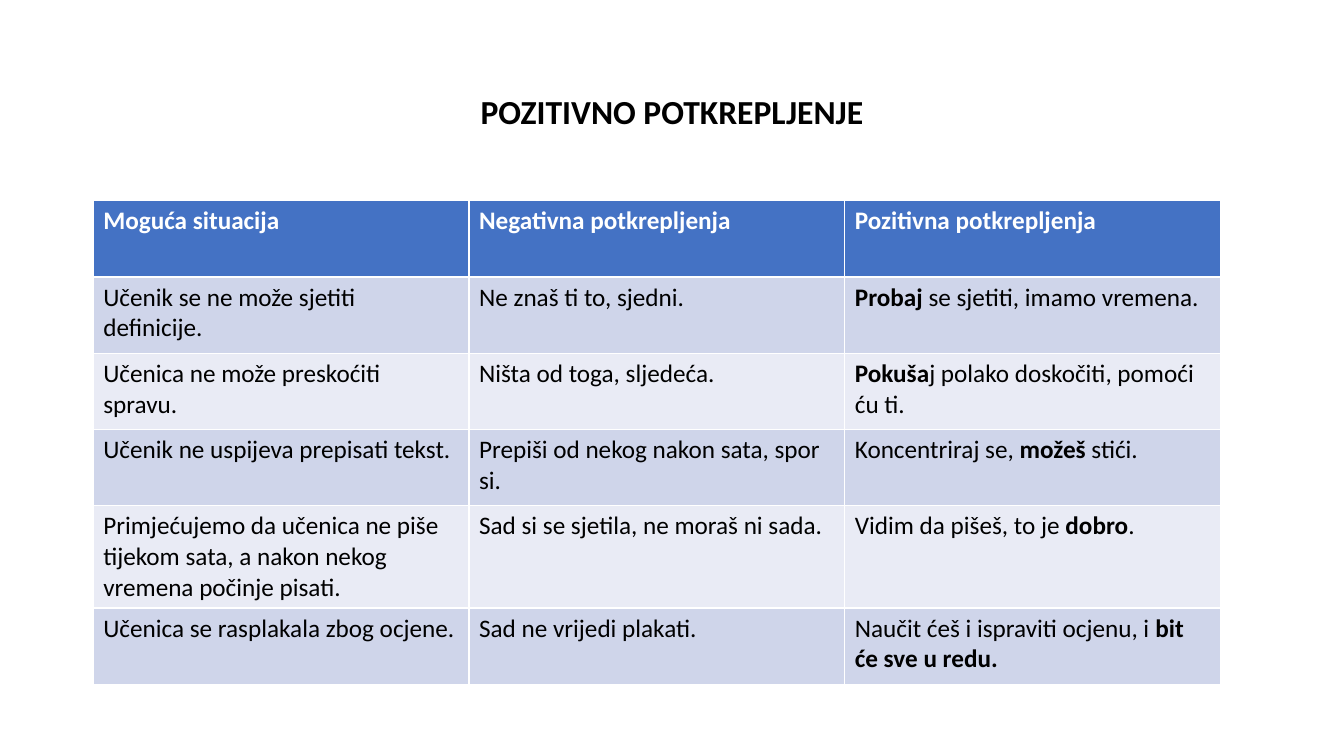
from dataclasses import dataclass

from pptx import Presentation
from pptx.dml.color import RGBColor
from pptx.enum.text import MSO_ANCHOR, PP_ALIGN
from pptx.slide import Slide
from pptx.table import _Cell
from pptx.text.text import Font
from pptx.util import Cm, Pt

FONT_NAME = "Calibri"
COLORS = {
    "text": "000000",
    "header_text": "FFFFFF",
    "header": "4472C4",
    "odd_row": "CFD5EA",
    "even_row": "E9EBF5",
}
COLUMN_WIDTH = Cm(9.47)
ROW_HEIGHT = Cm(1.92)
TALL_ROW_HEIGHT = Cm(2.56)


@dataclass
class Situation:
    description: str
    negative: str
    positive: list[str]  # pieces of one sentence
    bold_piece: int


HEADERS = ["Moguća situacija", "Negativna potkrepljenja", "Pozitivna potkrepljenja"]
SITUATIONS = [
    Situation("Učenik se ne može sjetiti definicije.", "Ne znaš ti to, sjedni.",
              ["Probaj ", "se sjetiti, imamo vremena."], 0),
    Situation("Učenica ne može preskoćiti spravu.", "Ništa od toga, sljedeća.",
              ["Pokuša", "j polako doskočiti, pomoći ću ti."], 0),
    Situation("Učenik ne uspijeva prepisati tekst.",
              "Prepiši od nekog nakon sata, spor si.",
              ["Koncentriraj se, ", "možeš", " stići."], 1),
    Situation("Primjećujemo da učenica ne piše tijekom sata, "
              "a nakon nekog vremena počinje pisati.",
              "Sad si se sjetila, ne moraš ni sada.",
              ["Vidim da pišeš, to je", " dobro", "."], 1),
    Situation("Učenica se rasplakala zbog ocjene.", "Sad ne vrijedi plakati.",
              ["Naučit ćeš i ispraviti ocjenu, i ", "bit će sve u redu."], 1),
]
TALL_ROW = 4


def format_font(font: Font, size: int, color: str, bold: bool) -> None:
    font.name = FONT_NAME
    font.size = Pt(size)
    font.bold = bold
    font.color.rgb = RGBColor.from_string(COLORS[color])


def fill_cell(cell: _Cell, pieces: list[str], bold_piece: int | None,
              fill: str, text_color: str) -> None:
    """Write the pieces as runs of one paragraph, with at most one in bold."""
    cell.fill.solid()
    cell.fill.fore_color.rgb = RGBColor.from_string(COLORS[fill])
    paragraph = cell.text_frame.paragraphs[0]
    for index, piece in enumerate(pieces):
        run = paragraph.add_run()
        run.text = piece
        format_font(run.font, 18, text_color, index == bold_piece)


def add_title(slide: Slide) -> None:
    title = slide.shapes.title
    title.left, title.top = Cm(2.33), Cm(1.01)
    title.width, title.height = Cm(29.21), Cm(3.68)
    title.text_frame.text = "POZITIVNO POTKREPLJENJE"
    title.text_frame.vertical_anchor = MSO_ANCHOR.MIDDLE
    paragraph = title.text_frame.paragraphs[0]
    paragraph.alignment = PP_ALIGN.CENTER
    paragraph.line_spacing = 0.9
    format_font(paragraph.runs[0].font, 24, "text", True)


def add_situation_table(slide: Slide) -> None:
    row_count = len(SITUATIONS) + 1
    table = slide.shapes.add_table(
        row_count, len(HEADERS), Cm(2.35), Cm(5.06),
        COLUMN_WIDTH * len(HEADERS),
        ROW_HEIGHT * (row_count - 1) + TALL_ROW_HEIGHT).table
    for column in table.columns:
        column.width = COLUMN_WIDTH
    for index, row in enumerate(table.rows):
        row.height = TALL_ROW_HEIGHT if index == TALL_ROW else ROW_HEIGHT

    for column_index, header in enumerate(HEADERS):
        fill_cell(table.cell(0, column_index), [header], 0, "header", "header_text")
    for row_index, situation in enumerate(SITUATIONS, start=1):
        fill = "odd_row" if row_index % 2 else "even_row"
        fill_cell(table.cell(row_index, 0), [situation.description], None, fill, "text")
        fill_cell(table.cell(row_index, 1), [situation.negative], None, fill, "text")
        fill_cell(table.cell(row_index, 2), situation.positive,
                  situation.bold_piece, fill, "text")


def main() -> None:
    presentation = Presentation()
    presentation.slide_width, presentation.slide_height = Cm(33.87), Cm(19.05)
    title_only_layout = presentation.slide_layouts[5]
    slide = presentation.slides.add_slide(title_only_layout)
    add_title(slide)
    add_situation_table(slide)
    presentation.save("out.pptx")


if __name__ == "__main__":
    main()
